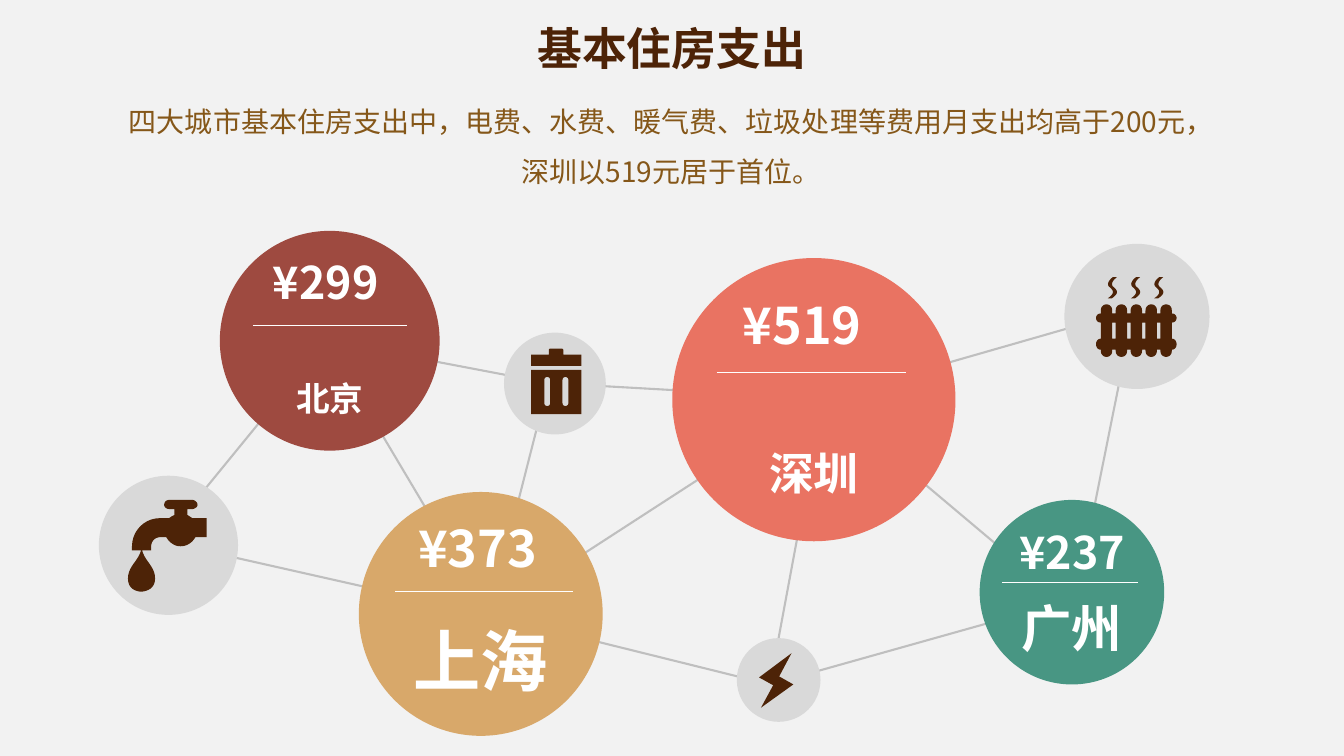
from dataclasses import dataclass
from lxml.etree import SubElement
from pptx import Presentation
from pptx.dml.color import RGBColor
from pptx.enum.shapes import MSO_CONNECTOR as Connector, MSO_SHAPE as Preset
from pptx.enum.text import MSO_ANCHOR as Anchor, MSO_AUTO_SIZE as AutoSize, PP_ALIGN as Align
from pptx.oxml.ns import qn
from pptx.slide import Slide
from pptx.util import Pt

BACKGROUND = RGBColor(0xF2, 0xF2, 0xF2)
BROWN = RGBColor(0x4D, 0x23, 0x07)
OCHRE = RGBColor(0x85, 0x57, 0x19)
WHITE = RGBColor(0xFF, 0xFF, 0xFF)
LINK_GREY = RGBColor(0xBF, 0xBF, 0xBF)
DISC_GREY = RGBColor(0xD9, 0xD9, 0xD9)
CORAL = RGBColor(0xE9, 0x73, 0x62)
GREEN = RGBColor(0x48, 0x96, 0x83)
MAROON = RGBColor(0x9E, 0x4A, 0x40)
SAND = RGBColor(0xD8, 0xA8, 0x6A)

HUBS = {
    "beijing": (233, 243.4), "shanghai": (349.5, 439.2), "shenzhen": (588, 284.7),
    "guangzhou": (760.3, 429.8), "guangzhou top": (768.2, 429.1), "bin": (391.7, 273.6),
    "heating": (810, 221), "power": (550, 488.9), "water": (116, 386.6),
}
LINKS = [
    ("beijing", "bin"), ("bin", "shenzhen"), ("heating", "shenzhen"),
    ("power", "guangzhou"), ("water", "shanghai"), ("shanghai", "shenzhen"),
    ("water", "beijing"), ("power", "shanghai"), ("heating", "guangzhou top"),
    ("beijing", "shanghai"), ("shenzhen", "power"), ("shenzhen", "guangzhou"),
    ("bin", "shanghai"),
]
# name, name size, colour, circle (left, top, diameter),
# price, price size, price box, price alignment, rule (left, right, y)
CITIES = [
    ("深圳", 32, CORAL, (480.2, 184.3, 202.3),
     "¥519", 36, (523.4, 206.6, 114.5, 50.4), Align.LEFT, (511.9, 647.3, 265.7)),
    ("广州", 36, GREEN, (699.8, 357.1, 131.8),
     "¥237", 32, (719.3, 371.5, 93.6, 45.4), Align.CENTER, (715.7, 812.9, 416.2)),
    ("北京", 24, MAROON, (157, 164.9, 157),
     "¥299", 32, (187.9, 178.6, 93.6, 45.4), Align.LEFT, (180.7, 290.9, 232.6)),
    ("上海", 48, SAND, (256.3, 351.4, 174.2),
     "¥373", 36, (291.6, 365.8, 103.7, 50.4), Align.LEFT, (282.2, 409, 422.6)),
]
DISCS = [(526.3, 455.8, 59.8), (360, 237.6, 72.7), (70.6, 339.8, 99.4), (760.3, 174.2, 103.7)]

# An outline step is a point (x, y) or a cubic curve (x1, y1, x2, y2, x, y).
BOLT = [(1.4, 38.9), (10.1, 22.9), (0, 17.3), (23.2, 0), (14.4, 16.6), (24.5, 22.3)]
STEAM = [
    (2.9, 15.1), (9.4, 10.8, 5.8, 8.6, 3.6, 6.5), (1.4, 3.6, 6.5, 0, 6.5, 0), (3.6, 0),
    (3.6, 0, -1.4, 3.6, 0.7, 6.5), (2.9, 8.6, 6.5, 10.8, 0, 15.1),
]
TAP = [
    (46.1, 13), (56.2, 13), (56.2, 26.6), (48.2, 26.6),
    (46.1, 30.2, 42.5, 33.1, 37.4, 33.1), (33.1, 33.1, 29.5, 30.2, 27.4, 26.6),
    (23, 26.6), (19.4, 26.6, 16.6, 29.5, 16.6, 33.1), (16.6, 36), (10.1, 36),
    (12.2, 43.9, 19.4, 47.5, 19.4, 56.2), (19.4, 65.5, 9.4, 65.5, 9.4, 65.5),
    (9.4, 65.5, 0, 65.5, 0, 56.2), (0, 47.5, 7.2, 43.9, 9.4, 36), (2.9, 36), (2.9, 33.1),
    (2.9, 22.3, 11.5, 13, 23, 13), (29.5, 13), (30.2, 12.2, 31.7, 11.5, 33.1, 10.8),
    (33.1, 6.5), (29.5, 6.5), (27.4, 6.5, 25.9, 5, 25.9, 3.6),
    (25.9, 1.4, 27.4, 0, 29.5, 0), (46.1, 0), (47.5, 0, 49.7, 1.4, 49.7, 3.6),
    (49.7, 5, 47.5, 6.5, 46.1, 6.5), (42.5, 6.5), (42.5, 10.8),
    (43.9, 11.5, 44.6, 12.2, 46.1, 13),
]
BIN_LID = [(0, 4.3), (12.6, 4.3), (12.6, 0.7), (13.3, 0), (22.3, 0), (23, 0.7),
           (23, 4.3), (35.8, 4.3), (35.8, 12.2), (0, 12.2)]


def box_outline(left, top, right, bottom):
    return [(left, top), (right, top), (right, bottom), (left, bottom)]


def cap(start, end, y, bulge):
    """Round cap from start to end at height y; a negative bulge points up."""
    return [(start, y), (start, y + bulge, end, y + bulge, end, y)]


def bin_body():
    slots = [cap(x - 2.1, x + 2.1, 22.3, -2.8) + cap(x + 2.1, x - 2.1, 38.9, 2.8)
             for x in (11.5, 24.5)]
    return [box_outline(0, 15.1, 35.8, 46.8)] + slots


def radiator():
    columns = [7.2 + 10.65 * index for index in range(5)]
    half, left, right = 4.1, 3.1, 53.9
    outline = []
    for x in columns:
        outline += [(x - half, 6.5)] + cap(x - half, x + half, 4.4, -5.9) + [(x + half, 6.5)]
    outline += [(right + 4.5, 6.5, right + 4.5, 13, right, 13), (right, 24.5),
                (right + 4.5, 24.5, right + 4.5, 32.4, right, 32.4)]
    for x in reversed(columns):
        outline += [(x + half, 32.4)] + cap(x + half, x - half, 33.1, 5.9) + [(x - half, 32.4)]
    outline += [(left - 4.5, 32.4, left - 4.5, 24.5, left, 24.5), (left, 13),
                (left - 4.5, 13, left - 4.5, 6.5, left, 6.5)]
    gaps = [box_outline(a + half, 13, b - half, 24.5) for a, b in zip(columns, columns[1:])]
    return [outline] + gaps


def flatten(outline, steps=10):
    """Turn the curves of an outline into short straight pieces."""
    points = []
    for step in outline:
        if len(step) == 2:
            points.append(step)
            continue
        start, controls = points[-1], (step[:2], step[2:4], step[4:])
        for index in range(1, steps + 1):
            t = index / steps
            weights = ((1 - t) ** 3, 3 * t * (1 - t) ** 2, 3 * t * t * (1 - t), t ** 3)
            points.append(tuple(sum(w * p[axis] for w, p in zip(weights, (start, *controls)))
                                for axis in (0, 1)))
    return points


def write(frame, text, size, color, bold=True, align=Align.CENTER, spacing=None,
          font="Noto Sans CJK SC"):
    paragraph = frame.paragraphs[0]
    paragraph.alignment = align
    if spacing:
        paragraph.line_spacing = spacing
    run = paragraph.add_run()
    run.text = text
    run.font.size, run.font.bold, run.font.name = Pt(size), bold, font
    run.font.color.rgb = color
    SubElement(run.font._element, qn("a:ea"), typeface=font)


@dataclass
class Canvas:
    slide: Slide
    icon_color: RGBColor = BROWN

    def finish(self, shape, color):
        shape.shadow.inherit = False
        shape.fill.solid()
        shape.fill.fore_color.rgb = color
        shape.line.fill.background()
        return shape

    def line(self, start, end, color, width):
        line = self.slide.shapes.add_connector(
            Connector.STRAIGHT, *(Pt(value) for value in (*start, *end)))
        line.line.color.rgb = color
        line.line.width = Pt(width)
        SubElement(line._element.spPr, qn("a:effectLst"))

    def circle(self, left, top, diameter, color):
        shape = self.slide.shapes.add_shape(
            Preset.OVAL, Pt(left), Pt(top), Pt(diameter), Pt(diameter))
        return self.finish(shape, color)

    def text(self, box, text, wrap=True, **style):
        frame = self.slide.shapes.add_textbox(*(Pt(value) for value in box)).text_frame
        frame.word_wrap = wrap
        frame.auto_size = AutoSize.SHAPE_TO_FIT_TEXT
        write(frame, text, **style)

    def icon(self, left, top, outlines):
        builder = None
        for outline in outlines:
            points = [(Pt(left + x), Pt(top + y)) for x, y in flatten(outline)]
            if builder is None:
                builder = self.slide.shapes.build_freeform(*points[0], scale=1.0)
            else:
                builder.move_to(*points[0])
            builder.add_line_segments(points[1:], close=True)
        self.finish(builder.convert_to_shape(), self.icon_color)

    def city_circle(self, name, size, color, circle):
        frame = self.circle(*circle, color).text_frame
        frame.margin_left = frame.margin_top = frame.margin_right = frame.margin_bottom = 0
        frame.vertical_anchor = Anchor.BOTTOM
        write(frame, name, size, WHITE)


def main():
    presentation = Presentation()
    presentation.slide_width, presentation.slide_height = Pt(960), Pt(540)
    slide = presentation.slides.add_slide(presentation.slide_layouts[6])
    slide.background.fill.solid()
    slide.background.fill.fore_color.rgb = BACKGROUND
    canvas = Canvas(slide)

    for start, end in LINKS:
        canvas.line(HUBS[start], HUBS[end], LINK_GREY, 1.5)
    canvas.text((372.2, 11.5, 215.3, 45.4), "基本住房支出", size=32, color=BROWN)
    canvas.text((79.9, 59, 799.2, 79.2),
                "四大城市基本住房支出中，电费、水费、暖气费、垃圾处理等费用月支出均高于200元，"
                "深圳以519元居于首位。", size=20, color=OCHRE, bold=False, spacing=1.5)

    for city in CITIES:
        canvas.city_circle(*city[:4])
    for disc in DISCS:
        canvas.circle(*disc, DISC_GREY)
    canvas.icon(542.2, 466.6, [BOLT])
    canvas.icon(783.2, 217.4, radiator())
    for index in range(3):
        canvas.icon(791.3 + 16.56 * index, 198, [STEAM])
    canvas.icon(91.4, 357.1, [TAP])
    canvas.icon(379.4, 249.1, [BIN_LID])
    canvas.icon(379.4, 249.1, bin_body())

    for *_, price, size, box, align, (left, right, y) in CITIES:
        canvas.text(box, price, wrap=False, size=size, color=WHITE, align=align)
        canvas.line((left, y), (right, y), WHITE, 0.5)
    presentation.save("out.pptx")


if __name__ == "__main__":
    main()
